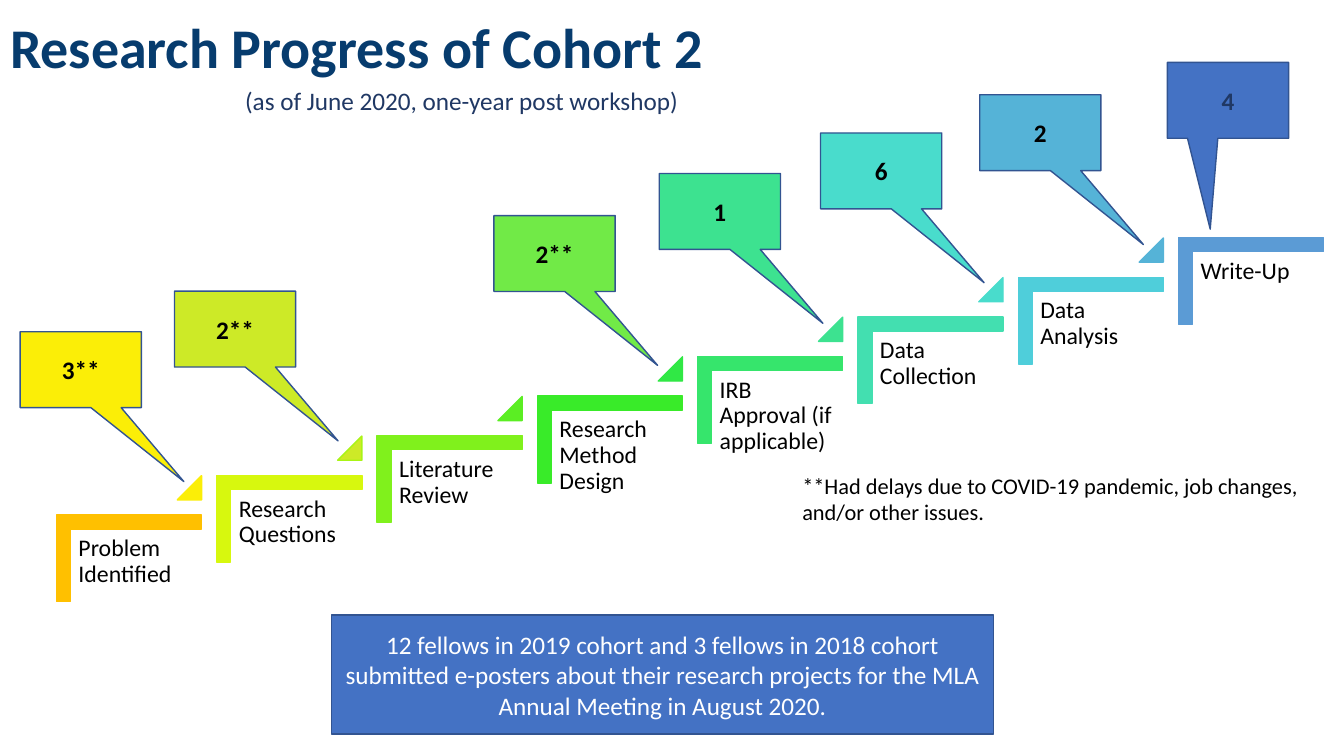
"""Build the slide on the research progress of cohort 2."""
from dataclasses import dataclass
from typing import Any

from pptx import Presentation
from pptx.dml.color import RGBColor
from pptx.enum.shapes import MSO_SHAPE
from pptx.enum.text import MSO_ANCHOR, MSO_AUTO_SIZE, PP_ALIGN
from pptx.util import Pt

CORNER = MSO_SHAPE.CORNER
WEDGE = MSO_SHAPE.RECTANGULAR_CALLOUT
PEAK = MSO_SHAPE.ISOSCELES_TRIANGLE
RECT = MSO_SHAPE.RECTANGLE
TOP, MIDDLE, BOTTOM = MSO_ANCHOR.TOP, MSO_ANCHOR.MIDDLE, MSO_ANCHOR.BOTTOM
LEFT, CENTER = PP_ALIGN.LEFT, PP_ALIGN.CENTER
FIXED = MSO_AUTO_SIZE.NONE


@dataclass(frozen=True)
class Theme:
    """Colours, font and type sizes."""
    font: str = "Calibri"
    title: str = "073C6E"
    navy: str = "203864"
    ink: str = "000000"
    white: str = "FFFFFF"
    blue: str = "4472C4"
    edge: str = "325491"
    head: float = 40
    body: float = 18
    label: float = 17
    note: float = 16


@dataclass(frozen=True)
class Box:
    """A frame in points."""
    left: float
    top: float
    width: float
    height: float

    def shift(self, right: float, up: float) -> "Box":
        """Return the frame moved right and up."""
        return Box(self.left + right, self.top - up, self.width, self.height)

    def spots(self) -> list[Pt]:
        """Return the four lengths."""
        return [Pt(n) for n in (self.left, self.top, self.width, self.height)]


@dataclass(frozen=True)
class Step:
    """A stair with the peak that leads to the next one."""
    text: str
    fill: str
    peak: str = ""
    rim: str = ""


@dataclass(frozen=True)
class Count:
    """A callout with a number of fellows."""
    text: str
    left: float
    top: float
    fill: str
    ink: str = Theme.ink
    tail: tuple[float, float] = (0.85, 1.474)


THEME = Theme()
RISE, RUN = 28.3, 114.5
STAIR = Box(61.2, 347, 61.9, 103.7)
LABEL = Box(51.1, 378, 93.6, 82.1)
TIP = Box(126.7, 339.8, 17.3, 17.3)

STEPS = [
    Step("Problem Identified", "FFC000", "FBEE07"),
    Step("Research Questions", "D7F80E", "CDEA27", "A9F415"),
    Step("Literature Review", "80F11C", "5BEE23"),
    Step("Research Method Design", "39EB29", "30E845"),
    Step("IRB Approval (if applicable)", "36E56C", "3DE290"),
    Step("Data Collection", "43DFB0", "49DCCC"),
    Step("Data Analysis", "4FCEDA", "55B3D7"),
    Step("Write-Up", "5B9BD5"),
]

COUNTS = [
    Count("3**", 14.4, 237, "FBEE07"),
    Count("2**", 124.6, 208, "CDEA27"),
    Count("2**", 352.8, 154, "71EA47"),
    Count("1", 470.9, 124, "3DE290"),
    Count("6", 586.1, 95, "49DCCC"),
    Count("2", 699.8, 67.7, "55B3D7"),
    Count("4", 833.8, 44.6, THEME.blue, THEME.navy, (-0.146, 1.698)),
]


def write(shape: Any, text: str, size: float, ink: str, bold: bool = False,
          align: Any = LEFT, anchor: Any = TOP, space: float = 1) -> None:
    """Set and format the text of a shape."""
    frame = shape.text_frame
    frame.text = text
    frame.word_wrap = True
    frame.auto_size = FIXED
    frame.vertical_anchor = anchor
    for para in frame.paragraphs:
        para.alignment = align
        para.line_spacing = space
        for run in para.runs:
            font = run.font
            font.name, font.size, font.bold = THEME.font, Pt(size), bold
            font.color.rgb = RGBColor.from_string(ink)


def draw(slide: Any, kind: Any, box: Box, fill: str, line: str,
         tune: tuple[float, ...] = ()) -> Any:
    """Add a filled preset shape."""
    shape = slide.shapes.add_shape(kind, *box.spots())
    shape.shadow.inherit = False
    shape.fill.solid()
    shape.fill.fore_color.rgb = RGBColor.from_string(fill)
    shape.line.color.rgb = RGBColor.from_string(line)
    shape.line.width = Pt(1)
    for i, value in enumerate(tune):
        shape.adjustments[i] = value
    return shape


def stairs(slide: Any) -> None:
    """Draw the rising steps."""
    for i, step in enumerate(STEPS):
        move = (i * RUN, i * RISE)
        bar = draw(slide, CORNER, STAIR.shift(*move), step.fill, step.fill,
                   (0.161, 0.161))
        bar.rotation = 90
        label = slide.shapes.add_textbox(*LABEL.shift(*move).spots())
        frame = label.text_frame
        frame.margin_left = frame.margin_right = Pt(5)
        frame.margin_top = frame.margin_bottom = Pt(5)
        write(label, step.text, THEME.label, THEME.ink, space=0.9)
        if step.peak:
            draw(slide, PEAK, TIP.shift(*move), step.peak,
                 step.rim or step.peak, (1,))


def counts(slide: Any) -> None:
    """Draw the callouts."""
    for item in COUNTS:
        box = Box(item.left, item.top, 86.6, 54.2)
        shape = draw(slide, WEDGE, box, item.fill, THEME.edge, item.tail)
        write(shape, item.text, THEME.body, item.ink, True, CENTER, MIDDLE)


def notes(slide: Any) -> None:
    """Draw the title, the two remarks and the banner."""
    title = slide.shapes.title
    title.left, title.top, title.width, title.height = Box(
        0, 0, 656, 61.2).spots()
    write(title, "Research Progress of Cohort 2", THEME.head, THEME.title,
          True, anchor=BOTTOM, space=0.9)
    date = slide.shapes.add_textbox(*Box(168, 57.6, 338.4, 29).spots())
    write(date, "(as of June 2020, one-year post workshop)",
          THEME.body, THEME.navy)
    delay = slide.shapes.add_textbox(*Box(566, 333.4, 380, 65.5).spots())
    write(delay, "**Had delays due to COVID-19 pandemic, job changes, "
          "and/or other issues.", THEME.note, THEME.ink)
    banner = draw(slide, RECT, Box(237, 439.4, 472.5, 85), THEME.blue,
                  THEME.edge)
    write(banner, "12 fellows in 2019 cohort and 3 fellows in 2018 cohort "
          "submitted e-posters about their research projects for the MLA "
          "Annual Meeting in August 2020.", THEME.body, THEME.white,
          align=CENTER, anchor=MIDDLE)


def main() -> None:
    """Build and save the deck."""
    deck = Presentation()
    deck.slide_width, deck.slide_height = Pt(960), Pt(540)
    slide = deck.slides.add_slide(deck.slide_layouts.get_by_name("Title Only"))
    stairs(slide)
    counts(slide)
    notes(slide)
    deck.save("out.pptx")


if __name__ == "__main__":
    main()
